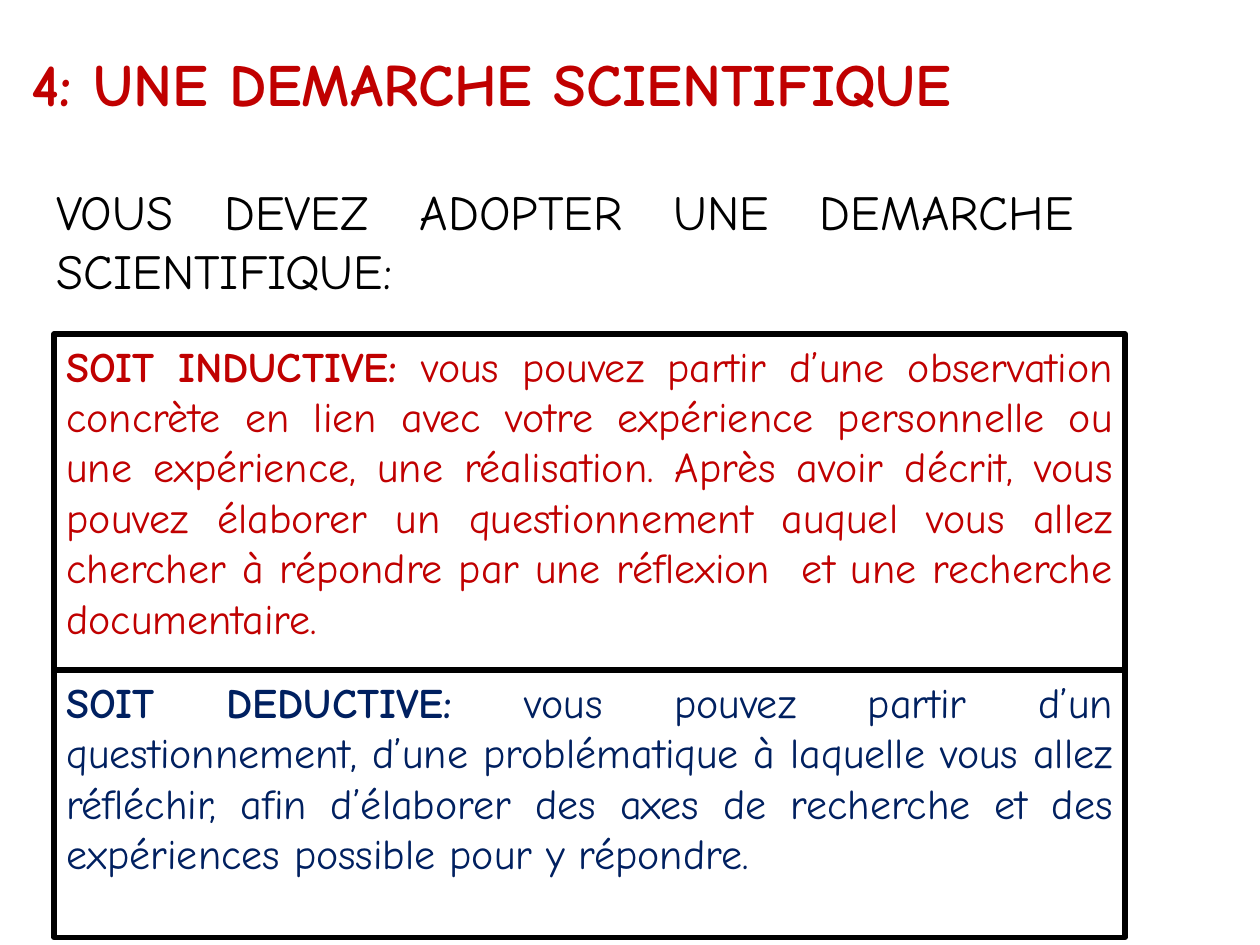
from pptx import Presentation
from pptx.dml.color import RGBColor
from pptx.enum.shapes import MSO_SHAPE
from pptx.enum.text import MSO_ANCHOR, MSO_AUTO_SIZE, PP_ALIGN
from pptx.util import Emu, Pt

EMU_PER_PX = 9144  # 100 px to the inch
COLOURS = {"red": "C00000", "navy": "002060", "black": "000000", "white": "FFFFFF"}
FONT = "Comic Neue"


def px(length):
    return Emu(length * EMU_PER_PX)


def colour(name):
    return RGBColor.from_string(COLOURS[name])


class SlideBuilder:
    """Holds the shared style and the slide being filled."""

    def __init__(self, presentation):
        self.slide = presentation.slides.add_slide(presentation.slide_layouts[5])

    def style(self, paragraph, size, colour_name, alignment):
        paragraph.alignment = alignment
        paragraph.font.name = FONT
        paragraph.font.size = Pt(size)
        paragraph.font.color.rgb = colour(colour_name)

    def title(self, text, left, top, width, height):
        shape = self.slide.shapes.title
        shape.left, shape.top, shape.width, shape.height = map(px, (left, top, width, height))
        frame = shape.text_frame
        frame.text = text
        frame.auto_size = MSO_AUTO_SIZE.NONE
        frame.vertical_anchor = MSO_ANCHOR.BOTTOM
        frame.margin_left = frame.margin_right = px(5)
        frame.margin_top = frame.margin_bottom = 0
        paragraph = frame.paragraphs[0]
        self.style(paragraph, 34.2, "red", PP_ALIGN.LEFT)
        paragraph.font.bold = True

    def text(self, text, left, top, width, height):
        box = self.slide.shapes.add_textbox(*map(px, (left, top, width, height)))
        frame = box.text_frame
        frame.word_wrap = True
        frame.text = text
        self.style(frame.paragraphs[0], 28, "black", PP_ALIGN.JUSTIFY)

    def framed_text(self, heading, body, colour_name, left, top, width, height):
        shape = self.slide.shapes.add_shape(
            MSO_SHAPE.RECTANGLE, *map(px, (left, top, width, height)))
        shape.shadow.inherit = False
        shape.fill.solid()
        shape.fill.fore_color.rgb = colour("white")
        shape.line.color.rgb = colour("black")
        shape.line.width = Pt(3.15)
        frame = shape.text_frame
        frame.word_wrap = True
        frame.vertical_anchor = MSO_ANCHOR.TOP
        paragraph = frame.paragraphs[0]
        self.style(paragraph, 24, colour_name, PP_ALIGN.JUSTIFY)
        heading_run = paragraph.add_run()
        heading_run.text = heading
        heading_run.font.bold = True
        paragraph.add_run().text = body


def main():
    presentation = Presentation()
    presentation.slide_width, presentation.slide_height = px(1000), px(750)
    builder = SlideBuilder(presentation)
    builder.title("4: UNE DEMARCHE SCIENTIFIQUE", 20, 0, 886, 94)
    builder.text("VOUS DEVEZ ADOPTER UNE DEMARCHE SCIENTIFIQUE:", 35, 139, 827, 104)
    builder.framed_text(
        "SOIT INDUCTIVE: ",
        "vous pouvez partir d’une observation concrète en lien avec votre expérience "
        "personnelle ou une expérience, une réalisation. Après avoir décrit, vous pouvez "
        "élaborer un questionnement auquel vous allez chercher à répondre par une "
        "réflexion  et une recherche documentaire.",
        "red", 43, 265, 850, 267)
    builder.framed_text(
        "SOIT DEDUCTIVE: ",
        "vous pouvez partir d’un questionnement, d’une problématique à laquelle vous "
        "allez réfléchir, afin d’élaborer des axes de recherche et des expériences "
        "possible pour y répondre. ",
        "navy", 43, 532, 850, 212)
    presentation.save("out.pptx")


if __name__ == "__main__":
    main()
